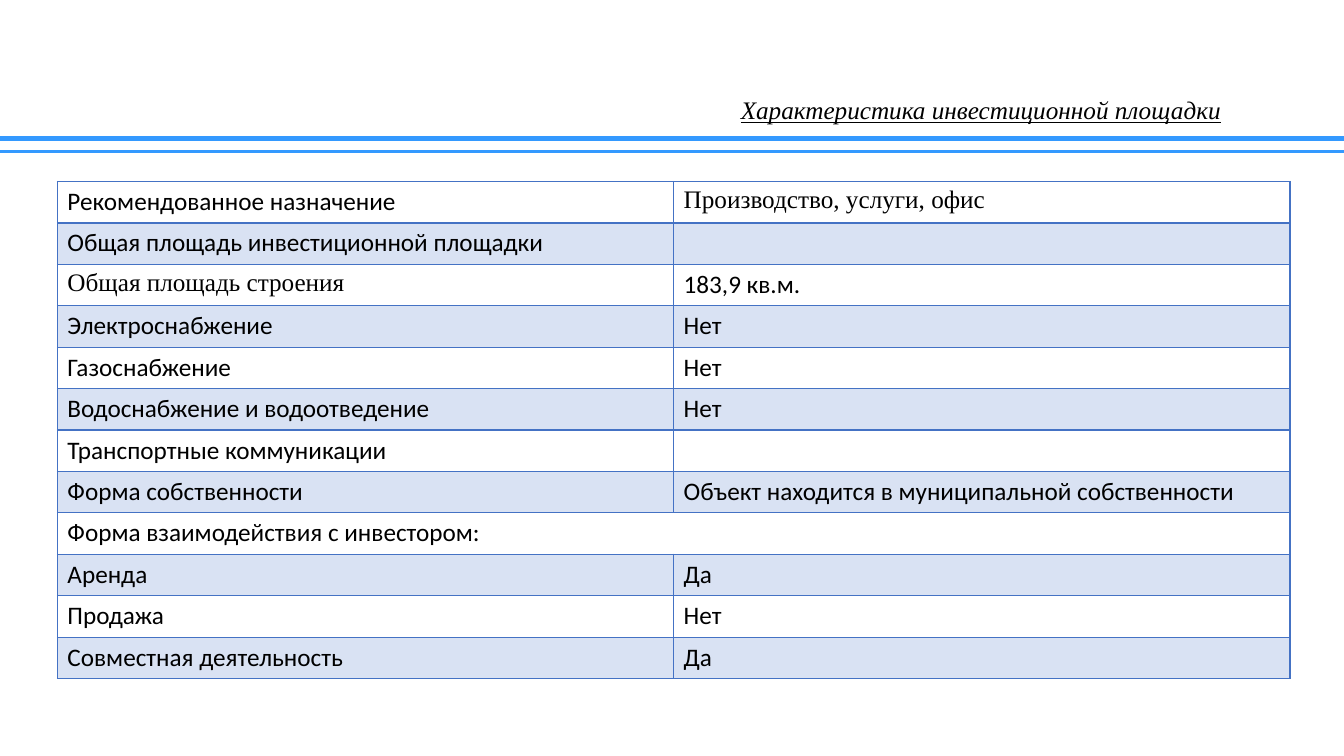
import pptx
import pptx.util
import pptx.dml.color
import pptx.enum.shapes
import pptx.enum.text
import pptx.oxml
import pptx.oxml.ns
import lxml.etree

Pt = pptx.util.Pt
RGBColor = pptx.dml.color.RGBColor
BLACK = RGBColor(0x00, 0x00, 0x00)
SKY = RGBColor(0x33, 0x99, 0xFF)
BLUE = RGBColor(0x44, 0x72, 0xC4)
SANS = "Calibri"
SERIF = "Times New Roman"
qn = pptx.oxml.ns.qn


def write(tf, text, font=SANS, size=18, italic=None, underline=None, align=None, spacing=None):
    p = tf.paragraphs[0]
    p.alignment = align
    p.line_spacing = spacing
    if not text:
        p.font.size = Pt(size)
        return
    r = p.add_run()
    r.text = text
    r.font.name = font
    r.font.size = Pt(size)
    r.font.bold = False
    r.font.italic = italic
    r.font.underline = underline
    r.font.color.rgb = BLACK


prs = pptx.Presentation()
prs.slide_width = Pt(960)
prs.slide_height = Pt(540)
s = prs.slides.add_slide(prs.slide_layouts[5])

for y, weight in [(99.1, 3.5), (108.2, 1.5)]:
    line = s.shapes.add_connector(
        pptx.enum.shapes.MSO_CONNECTOR.STRAIGHT, Pt(0), Pt(y), Pt(960), Pt(y))
    line.line.color.rgb = SKY
    line.line.width = Pt(weight)
    lxml.etree.SubElement(line._element.spPr, qn("a:effectLst"))

title = s.shapes.title
title.left, title.top, title.width, title.height = Pt(480), Pt(69.8), Pt(441.4), Pt(19.4)
tf = title.text_frame
tf.word_wrap = True
tf.auto_size = pptx.enum.text.MSO_AUTO_SIZE.NONE
tf.vertical_anchor = pptx.enum.text.MSO_ANCHOR.MIDDLE
write(tf, "Характеристика инвестиционной площадки", font=SERIF, italic=True,
      underline=True, align=pptx.enum.text.PP_ALIGN.CENTER, spacing=0.9)

rows = [
    ("Рекомендованное назначение", "Производство, услуги, офис"),
    ("Общая площадь инвестиционной площадки", ""),
    ("Общая площадь строения", "183,9 кв.м."),
    ("Электроснабжение", "Нет"),
    ("Газоснабжение", "Нет"),
    ("Водоснабжение и водоотведение", "Нет"),
    ("Транспортные коммуникации", ""),
    ("Форма собственности", "Объект находится в муниципальной собственности"),
    ("Форма взаимодействия с инвестором:", ""),
    ("Аренда", "Да"),
    ("Продажа", "Нет"),
    ("Совместная деятельность", "Да"),
]
serif_cells = {(0, 1), (2, 0)}
merged_row = 8

table = s.shapes.add_table(
    len(rows), 2, Pt(41), Pt(129.6), Pt(880.4), Pt(29.6 * len(rows))).table
table.first_row = False
table.horz_banding = False
for column in table.columns:
    column.width = Pt(440.2)

for i, row in enumerate(rows):
    table.rows[i].height = Pt(29.6)
    for j, text in enumerate(row):
        cell = table.cell(i, j)
        write(cell.text_frame, text, font=SERIF if (i, j) in serif_cells else SANS)
        tcPr = cell._tc.get_or_add_tcPr()
        for side in ("lnL", "lnR", "lnT", "lnB"):
            weight = 2 if i == 0 and side == "lnB" else 1
            ln = lxml.etree.SubElement(tcPr, qn("a:" + side), w=str(Pt(weight)))
            fill = lxml.etree.SubElement(ln, qn("a:solidFill"))
            lxml.etree.SubElement(fill, qn("a:srgbClr"), val=str(BLUE))
        if i % 2:
            cell.fill.solid()
            cell.fill.fore_color.rgb = BLUE
            colour = tcPr.find(qn("a:solidFill")).find(qn("a:srgbClr"))
            lxml.etree.SubElement(colour, qn("a:alpha"), val="20000")
        else:
            cell.fill.background()

table.cell(merged_row, 0).merge(table.cell(merged_row, 1))

prs.save("out.pptx")
